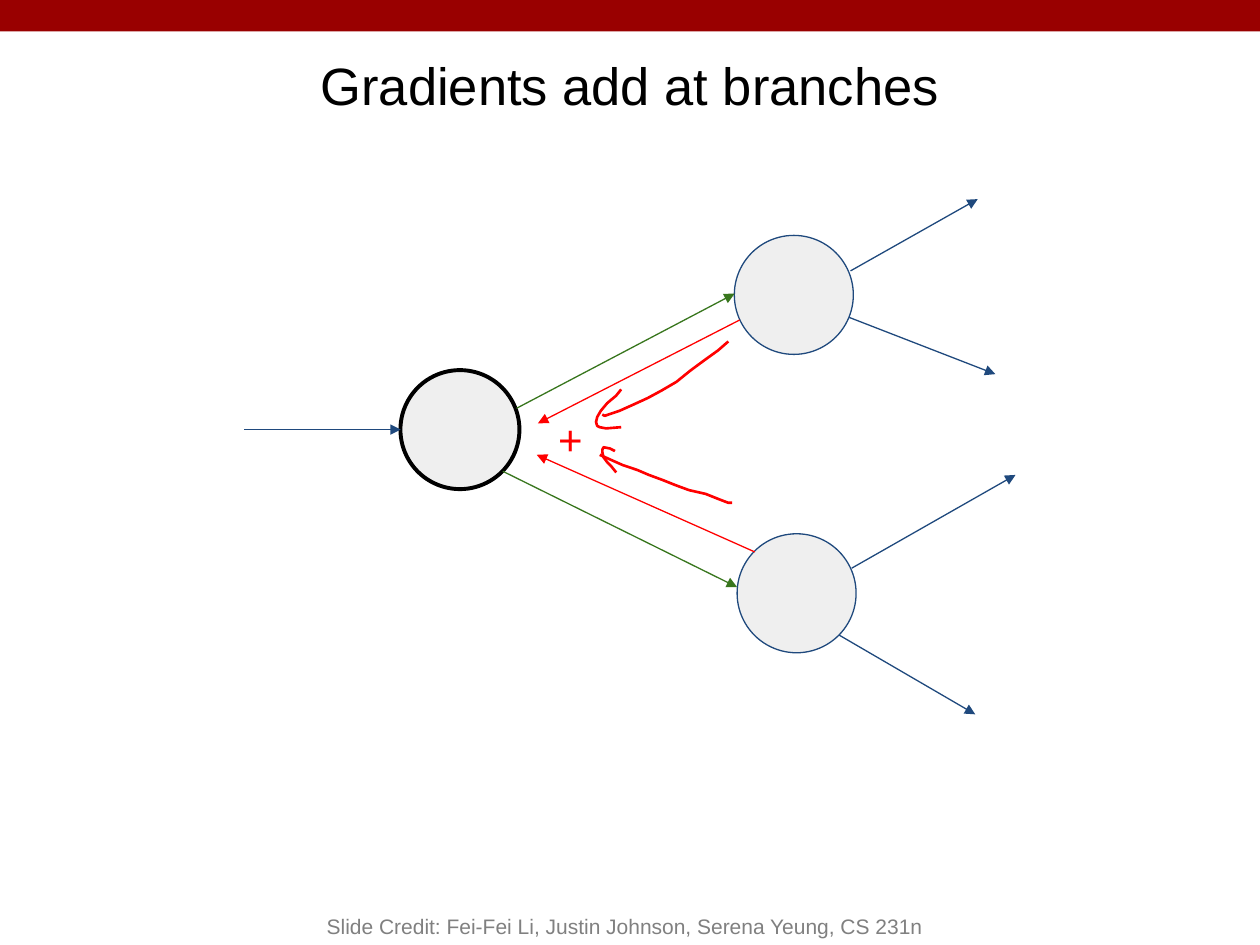
from dataclasses import dataclass
from typing import NamedTuple

from pptx import Presentation
from pptx.dml.color import RGBColor as Rgb
from pptx.enum.shapes import MSO_CONNECTOR as Connector, MSO_SHAPE as Preset
from pptx.enum.text import MSO_ANCHOR as Anchor, PP_ALIGN as Align
from pptx.oxml.ns import qn
from pptx.util import Pt
from lxml.etree import SubElement


@dataclass(frozen=True)
class Theme:
    font: str = "Arial"
    banner: str = "990000"
    node: str = "EFEFEF"
    black: str = "000000"
    blue: str = "1F497D"
    forward: str = "38761D"
    gradient: str = "FF0000"
    credit: str = "808080"
    title_size: float = 30
    plus_size: float = 24
    credit_size: float = 12
    thin: float = 0.75
    pen: float = 1.5
    bold: float = 2.25


THEME = Theme()
NODE_SIZE = 68


class Point(NamedTuple):
    x: float
    y: float


class Node(NamedTuple):
    center: Point
    color: str
    weight: float


class Arrow(NamedTuple):
    start: Point
    end: Point
    color: str


class Label(NamedTuple):
    text: str
    left: float
    top: float
    width: float
    height: float
    size: float
    color: str
    anchor: Anchor = Anchor.TOP
    align: Align = Align.LEFT


NODES = [
    Node(Point(262.8, 245.5), THEME.black, THEME.bold),
    Node(Point(453.6, 168.5), THEME.blue, THEME.thin),
    Node(Point(455.2, 339), THEME.blue, THEME.thin),
]

ARROWS = [
    Arrow(Point(295.2, 233.3), Point(419.8, 167.8), THEME.forward),
    Arrow(Point(287.3, 269.3), Point(421.2, 335.5), THEME.forward),
    Arrow(Point(422.6, 182.9), Point(307.4, 241.9), THEME.gradient),
    Arrow(Point(431.3, 315.4), Point(306.7, 259.9), THEME.gradient),
    Arrow(Point(486, 154.8), Point(558.7, 113.8), THEME.blue),
    Arrow(Point(485.3, 181.4), Point(568.8, 213.8), THEME.blue),
    Arrow(Point(486.7, 324.7), Point(580.3, 271.4), THEME.blue),
    Arrow(Point(479.5, 362.9), Point(557.3, 408.2), THEME.blue),
    Arrow(Point(139.7, 245.5), Point(229, 245.5), THEME.blue),
]

LABELS = [
    Label("+", 311.8, 229, 31, 32.4, THEME.plus_size, THEME.gradient),
    Label("Gradients add at branches", 24.5, 18, 671, 60.5,
          THEME.title_size, THEME.black, Anchor.MIDDLE, Align.CENTER),
    Label("Slide Credit: Fei-Fei Li, Justin Johnson, Serena Yeung, CS 231n",
          144, 504, 426.2, 36, THEME.credit_size, THEME.credit,
          Anchor.BOTTOM, Align.CENTER),
]

UPPER_SHAFT = [
    (416.2, 195.1), (410.4, 200.2), (402.5, 205.9), (394.6, 211.7),
    (386.6, 218.2), (378, 223.2), (370.1, 227.5), (362.2, 231.1),
    (354.2, 234.7), (345.6, 237.6), (344.2, 236.9),
]
UPPER_HEAD = [
    (355, 222.5), (352.1, 226.1), (347, 230.4), (343.4, 234.7),
    (341.3, 238.3), (340.6, 241.2), (341.3, 243.4), (342.7, 244.1),
    (346.3, 244.8), (355, 244.1),
]
LOWER_SHAFT = [
    (418.3, 287.3), (416.2, 287.3), (410.4, 285.1), (403.2, 282.2),
    (393.8, 280.1), (385.9, 277.2), (378.7, 274.3), (370.8, 271.4),
    (364.3, 268.6), (355.7, 265.7), (349.2, 262.8), (342.7, 259.9),
]
LOWER_HEAD = [
    (351.4, 257.8), (348.5, 256.3), (344.9, 255.6), (344.2, 257),
    (344.2, 258.5), (344.9, 261.4), (347, 264.2), (349.2, 266.4),
    (352.1, 270),
]
PEN_STROKES = [UPPER_SHAFT, UPPER_HEAD, LOWER_SHAFT, LOWER_HEAD]


def style_line(line, color: str, weight: float) -> None:
    line.color.rgb = Rgb.from_string(color)
    line.width = Pt(weight)


def draw_banner(page) -> None:
    banner = page.shapes.add_shape(Preset.RECTANGLE, 0, 0, Pt(720), Pt(18))
    banner.shadow.inherit = False
    banner.fill.solid()
    banner.fill.fore_color.rgb = Rgb.from_string(THEME.banner)
    banner.line.fill.background()


def draw_node(page, node: Node) -> None:
    circle = page.shapes.add_shape(
        Preset.OVAL, Pt(node.center.x - NODE_SIZE / 2),
        Pt(node.center.y - NODE_SIZE / 2), Pt(NODE_SIZE), Pt(NODE_SIZE))
    circle.shadow.inherit = False
    circle.fill.solid()
    circle.fill.fore_color.rgb = Rgb.from_string(THEME.node)
    style_line(circle.line, node.color, node.weight)


def draw_arrow(page, arrow: Arrow) -> None:
    ends = [Pt(value) for value in (*arrow.start, *arrow.end)]
    connector = page.shapes.add_connector(Connector.STRAIGHT, *ends)
    style_line(connector.line, arrow.color, THEME.thin)
    SubElement(connector.line._get_or_add_ln(), qn("a:tailEnd"), type="triangle")
    SubElement(connector._element.spPr, qn("a:effectLst"))


def draw_label(page, label: Label) -> None:
    box = page.shapes.add_textbox(
        Pt(label.left), Pt(label.top), Pt(label.width), Pt(label.height))
    frame = box.text_frame
    frame.text = label.text
    frame.word_wrap = True
    frame.vertical_anchor = label.anchor
    if label.anchor != Anchor.BOTTOM:
        frame.margin_left = frame.margin_right = Pt(7.2)
        frame.margin_top = frame.margin_bottom = Pt(7.2)
    para = frame.paragraphs[0]
    para.alignment = label.align
    font = para.runs[0].font
    font.name = THEME.font
    font.size = Pt(label.size)
    font.color.rgb = Rgb.from_string(label.color)


def draw_stroke(page, points: list[tuple[float, float]]) -> None:
    """Draw one open pen stroke through the points."""
    (start_x, start_y), *rest = [(Pt(x), Pt(y)) for x, y in points]
    builder = page.shapes.build_freeform(start_x, start_y)
    builder.add_line_segments(rest, close=False)
    stroke = builder.convert_to_shape()
    stroke.shadow.inherit = False
    stroke.fill.background()
    style_line(stroke.line, THEME.gradient, THEME.pen)


def main() -> None:
    deck = Presentation()
    deck.slide_width, deck.slide_height = Pt(720), Pt(540)
    page = deck.slides.add_slide(deck.slide_layouts[6])
    draw_banner(page)
    for draw, items in ((draw_node, NODES), (draw_arrow, ARROWS),
                        (draw_label, LABELS), (draw_stroke, PEN_STROKES)):
        for item in items:
            draw(page, item)
    deck.save("out.pptx")


if __name__ == "__main__":
    main()
